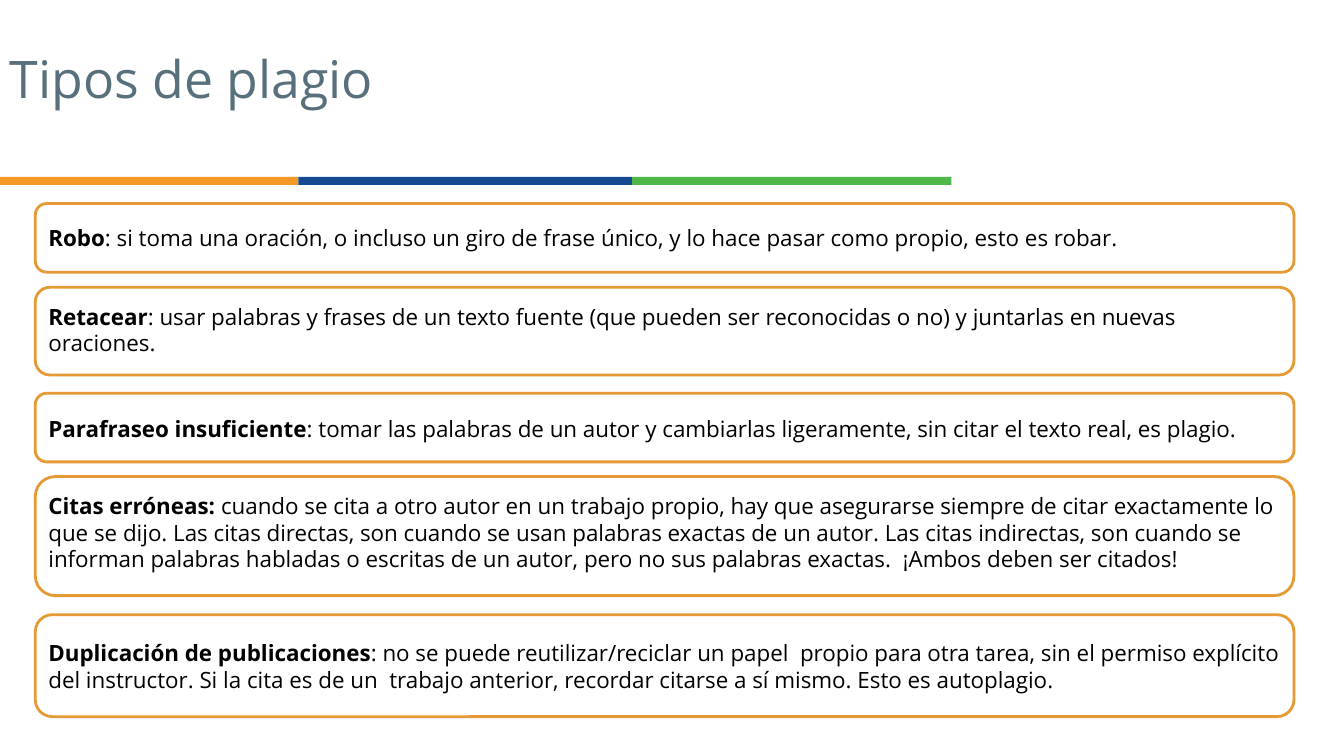
from pptx import Presentation
from pptx.dml.color import RGBColor
from pptx.enum.shapes import MSO_SHAPE
from pptx.enum.text import MSO_ANCHOR
from pptx.util import Cm, Pt

FONT = "Open Sans"
BARS = [
    (0, 7.52, "F49925"),
    (7.52, 8.41, "154A90"),
    (15.93, 8.05, "4EB748"),
]
CARDS = [
    (5.13, 1.73, 5.26, 1.47, "Robo",
     ": si toma una oración, o incluso un giro de frase único, y lo hace pasar "
     "como propio, esto es robar."),
    (7.24, 2.21, 7.44, 1.73, "Retacear",
     ": usar palabras y frases de un texto fuente (que pueden ser reconocidas "
     "o no) y juntarlas en nuevas oraciones."),
    (9.91, 1.73, 10.29, 1.02, "Parafraseo insuficiente",
     ": tomar las palabras de un autor y cambiarlas ligeramente, sin citar el "
     "texto real, es plagio."),
    (12.01, 3, 11.91, 3, "Citas erróneas:",
     " cuando se cita a otro autor en un trabajo propio, hay que asegurarse "
     "siempre de citar exactamente lo que se dijo. Las citas directas, son "
     "cuando se usan palabras exactas de un autor. Las citas indirectas, son "
     "cuando se informan palabras habladas o escritas de un autor, pero no sus "
     "palabras exactas.  ¡Ambos deben ser citados!"),
    (15.49, 2.57, 15.62, 2.31, "Duplicación de publicaciones",
     ": no se puede reutilizar/reciclar un papel  propio para otra tarea, sin "
     "el permiso explícito del instructor. Si la cita es de un  trabajo "
     "anterior, recordar citarse a sí mismo. Esto es autoplagio."),
]


def color(code):
    return RGBColor.from_string(code)


def add_box(slide, kind, x, y, w, h, fill, line=None):
    box = slide.shapes.add_shape(kind, Cm(x), Cm(y), Cm(w), Cm(h))
    box.shadow.inherit = False
    box.fill.solid()
    box.fill.fore_color.rgb = color(fill)
    if line:
        box.line.color.rgb = color(line)
        box.line.width = Pt(2)
    else:
        box.line.fill.background()


def add_text(slide, x, y, w, h, parts, size, ink, pad, anchor):
    frame = slide.shapes.add_textbox(Cm(x), Cm(y), Cm(w), Cm(h)).text_frame
    frame.word_wrap = True
    frame.vertical_anchor = anchor
    frame.margin_left = frame.margin_right = Cm(pad[0])
    frame.margin_top = frame.margin_bottom = Cm(pad[1])
    para = frame.paragraphs[0]
    para.font.name = FONT
    para.font.size = Pt(size)
    para.font.color.rgb = color(ink)
    for text, bold in parts:
        run = para.add_run()
        run.text = text
        run.font.bold = bold
    return para


def add_card(slide, top, high, y, h, term, text):
    add_box(slide, MSO_SHAPE.ROUNDED_RECTANGLE, 0.89, top, 31.72, high,
            "FFFFFF", "E69A36")
    add_text(slide, 1.02, y, 31.47, h, [(term, True), (text, False)],
             16, "000000", (0.2, 0.2), MSO_ANCHOR.MIDDLE)


def main():
    deck = Presentation()
    deck.slide_width, deck.slide_height = Cm(33.87), Cm(19.05)
    slide = deck.slides.add_slide(deck.slide_layouts[6])
    for x, w, fill in BARS:
        add_box(slide, MSO_SHAPE.RECTANGLE, x, 4.46, w, 0.2, fill)
    title = add_text(slide, 0, 1.22, 22.6, 3, [("Tipos de plagio", False)],
                     37, "586F7C", (0.25, 0.13), MSO_ANCHOR.TOP)
    title.line_spacing = 0.9
    for card in CARDS:
        add_card(slide, *card)
    deck.save("out.pptx")


if __name__ == "__main__":
    main()
